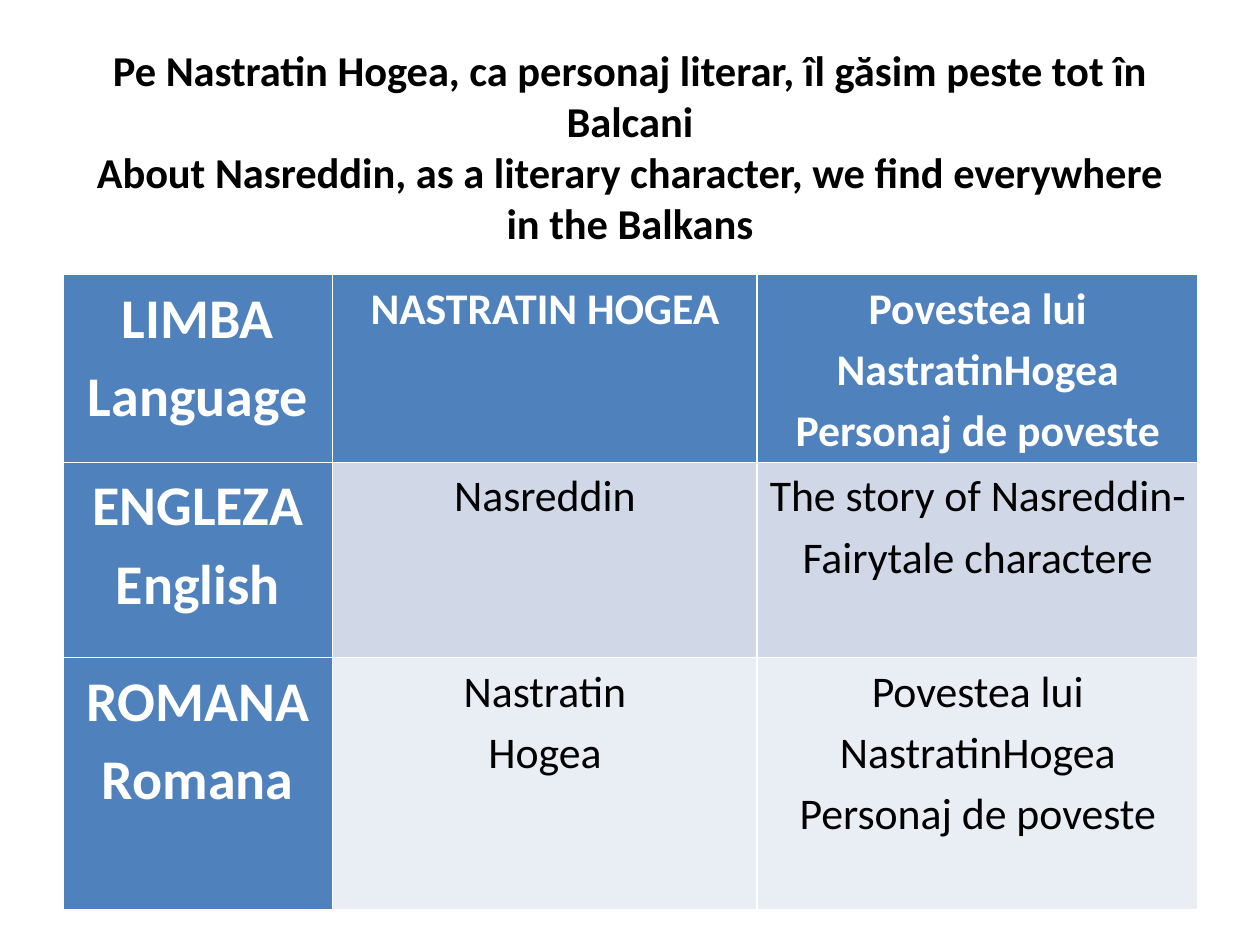
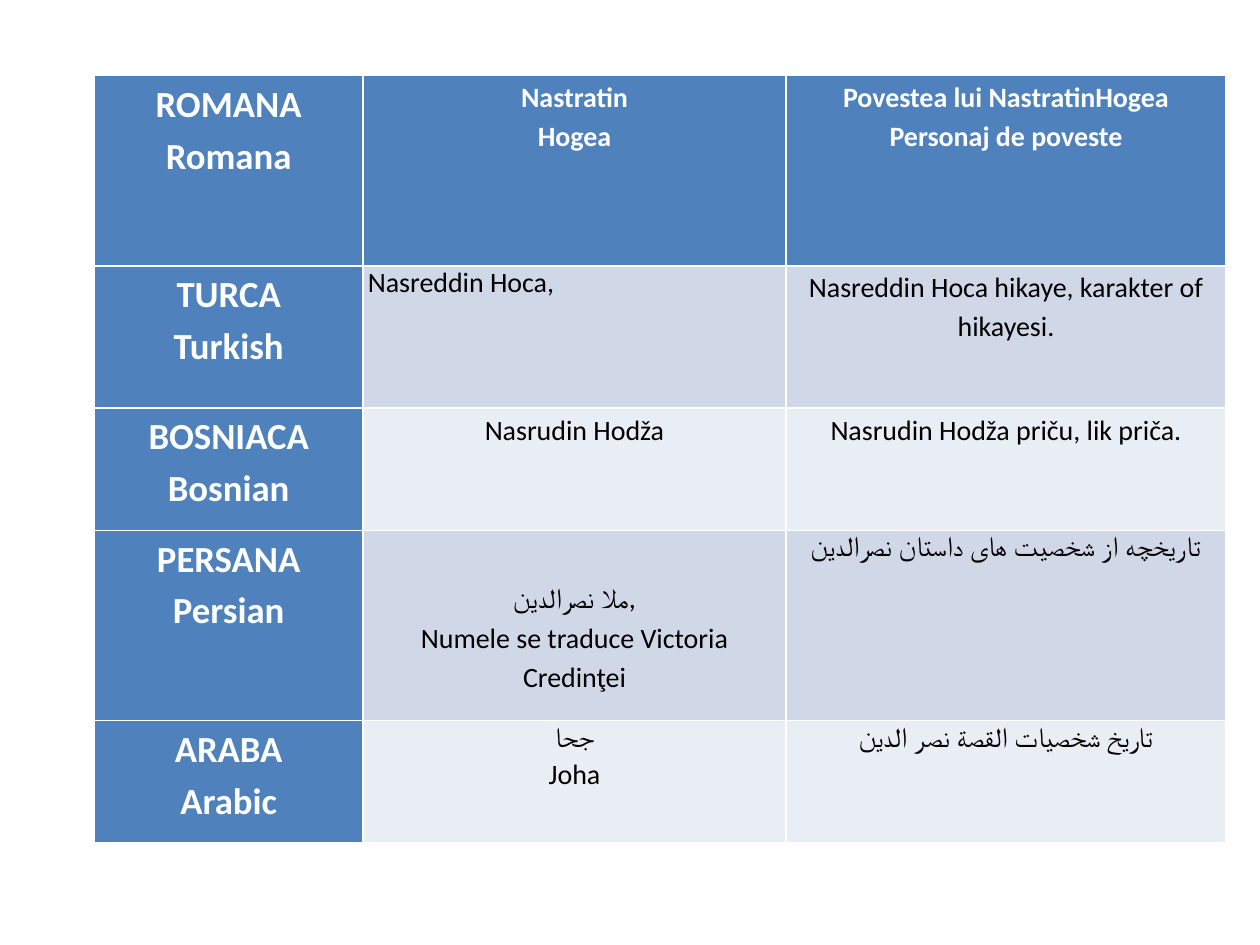
from dataclasses import dataclass

from pptx import Presentation
from pptx.dml.color import RGBColor as Rgb
from pptx.enum.text import MSO_ANCHOR as Anchor, MSO_AUTO_SIZE as Fit, PP_ALIGN as Align
from pptx.slide import Slide
from pptx.text.text import TextFrame as Frame
from pptx.util import Inches, Pt

FONT = "Calibri"
HUES = {"head": "4F81BD", "odd": "D0D8E8", "even": "E9EDF4", "white": "FFFFFF", "black": "000000"}


@dataclass(frozen=True)
class Cell:
    text: str
    align: Align = Align.CENTER
    space: float = 1.15
    top: float = 0


@dataclass(frozen=True)
class Grid:
    left: float
    top: float
    cols: list[float]
    rows: list[float]
    side: float
    big: float
    small: float
    cells: list[list[Cell]]


TALE = Cell("Povestea lui NastratinHogea\nPersonaj de poveste")
HOGEA = Cell("Nastratin\nHogea")
ROMANA = Cell("ROMANA\nRomana")

TITLE = (
    "Pe Nastratin Hogea, ca personaj literar, îl găsim peste tot în Balcani\n"
    "About Nasreddin, as a literary character, we find everywhere in the Balkans"
)

NAMES = Grid(
    0.5, 2.18, [2.14, 3.37, 3.5], [1.49, 1.55, 2], side=0.07, big=32, small=25,
    cells=[
        [Cell("LIMBA\nLanguage"), Cell("NASTRATIN HOGEA"), TALE],
        [Cell("ENGLEZA\nEnglish"), Cell("Nasreddin"),
         Cell("The story of Nasreddin-Fairytale charactere")],
        [ROMANA, HOGEA, TALE],
    ],
)

EAST = Grid(
    0.75, 0.6, [2.13, 3.36, 3.49], [1.51, 1.13, 0.97, 1.51, 0.97], side=0.04, big=21, small=16,
    cells=[
        [ROMANA, HOGEA, TALE],
        [Cell("TURCA\nTurkish"), Cell("Nasreddin Hoca,", Align.LEFT, 1),
         Cell("Nasreddin Hoca hikaye, karakter of hikayesi.")],
        [Cell("BOSNIACA\nBosnian"), Cell("Nasrudin Hodža"),
         Cell("Nasrudin Hodža priču, lik priča.")],
        [Cell("PERSANA\nPersian"),
         Cell("ملا نصرالدین,\nNumele se traduce Victoria Credinţei", top=0.37),
         Cell("تاریخچه از شخصیت های داستان نصرالدین")],
        [Cell("ARABA\nArabic"), Cell("جحا\nJoha"), Cell("تاريخ شخصيات القصة نصر الدين")],
    ],
)


def write(frame: Frame, text: str, *, size: float, hue: str = "black", bold: bool = False,
          align: Align = Align.CENTER, space: float = 1) -> None:
    """Fill a frame with one paragraph for each line of text."""
    for i, line in enumerate(text.split("\n")):
        para = frame.paragraphs[0] if i == 0 else frame.add_paragraph()
        para.alignment = align
        para.line_spacing = space
        run = para.add_run()
        run.text = line
        font = run.font
        font.name, font.size, font.bold = FONT, Pt(size), bold
        font.color.rgb = Rgb.from_string(HUES[hue])


def add_title(slide: Slide, text: str) -> None:
    title = slide.shapes.title
    title.left, title.top = Inches(0.5), Inches(0.3)
    title.width, title.height = Inches(9), Inches(1.72)
    frame = title.text_frame
    frame.word_wrap = True
    frame.auto_size = Fit.NONE
    frame.vertical_anchor = Anchor.MIDDLE
    write(frame, text, size=24.3, bold=True)


def add_grid(slide: Slide, grid: Grid) -> None:
    """Draw a table whose first row and first column are headings."""
    table = slide.shapes.add_table(
        len(grid.rows), len(grid.cols), Inches(grid.left), Inches(grid.top),
        Inches(sum(grid.cols)), Inches(sum(grid.rows)),
    ).table
    table.first_col = True
    for col, width in zip(table.columns, grid.cols):
        col.width = Inches(width)
    for row, height in zip(table.rows, grid.rows):
        row.height = Inches(height)
    for r, line in enumerate(grid.cells):
        for c, item in enumerate(line):
            cell = table.cell(r, c)
            head = r == 0 or c == 0
            band = "odd" if r % 2 else "even"
            cell.fill.solid()
            cell.fill.fore_color.rgb = Rgb.from_string(HUES["head" if head else band])
            cell.margin_left = cell.margin_right = Inches(grid.side)
            cell.margin_top, cell.margin_bottom = Inches(item.top), Inches(0)
            write(cell.text_frame, item.text, size=grid.small if c else grid.big,
                  hue="white" if head else "black", bold=head,
                  align=item.align, space=item.space)


def main() -> None:
    deck = Presentation()
    deck.slide_width, deck.slide_height = Inches(10), Inches(7.5)
    titled, blank = deck.slide_layouts[5], deck.slide_layouts[6]

    first = deck.slides.add_slide(titled)
    add_title(first, TITLE)
    add_grid(first, NAMES)

    add_grid(deck.slides.add_slide(blank), EAST)
    deck.save("out.pptx")


if __name__ == "__main__":
    main()
